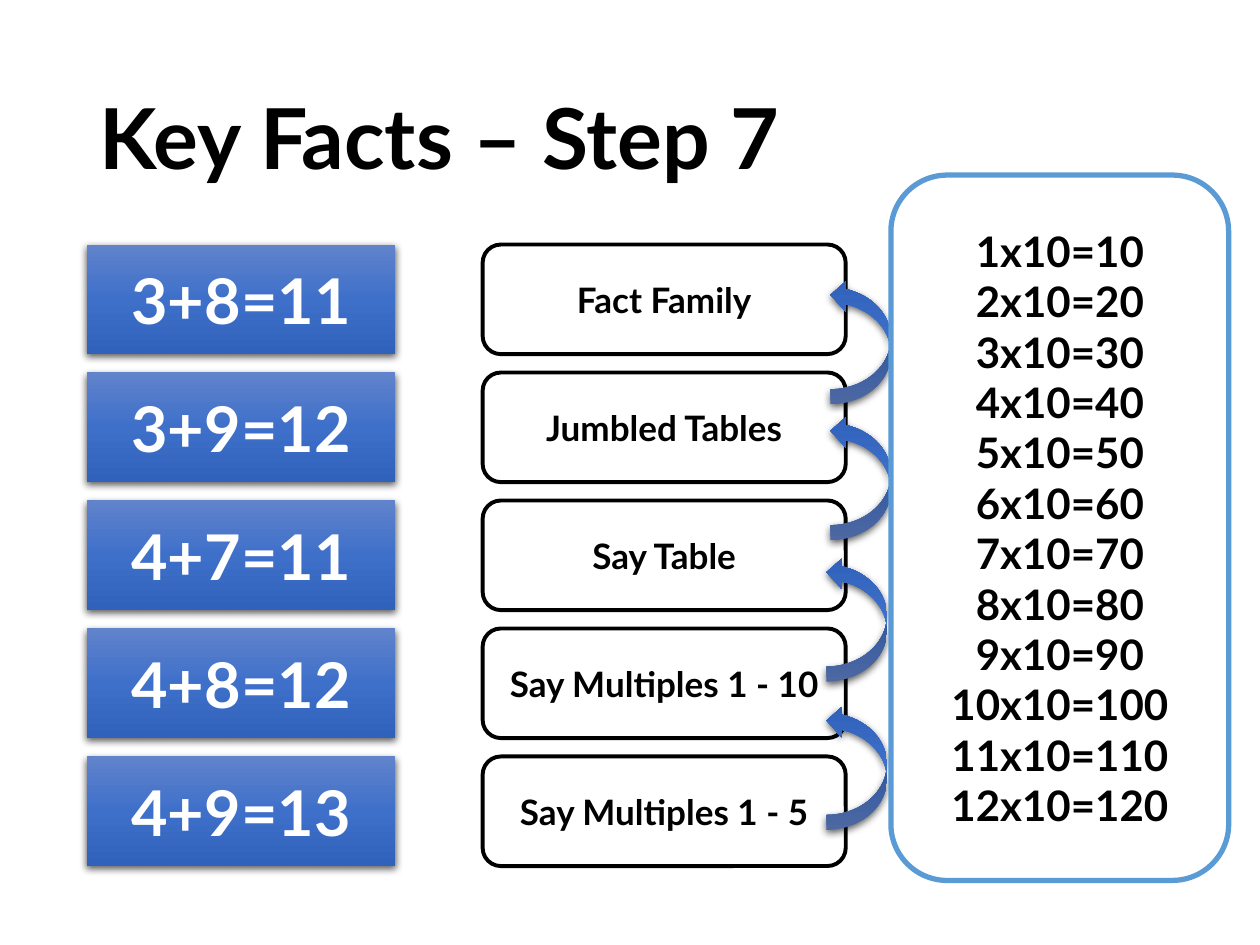
import copy

import pptx
import pptx.dml.color
import pptx.enum.shapes
import pptx.enum.text
import pptx.oxml
import pptx.oxml.ns
import pptx.util

Cm, Pt = pptx.util.Cm, pptx.util.Pt
RGBColor = pptx.dml.color.RGBColor
MSO_SHAPE = pptx.enum.shapes.MSO_SHAPE
PP_ALIGN = pptx.enum.text.PP_ALIGN
MSO_ANCHOR = pptx.enum.text.MSO_ANCHOR
qn = pptx.oxml.ns.qn

BLACK = RGBColor(0x00, 0x00, 0x00)
WHITE = RGBColor(0xFF, 0xFF, 0xFF)
SKY = RGBColor(0x5B, 0x9B, 0xD5)
BLUES = [RGBColor(0x61, 0x83, 0xCB), RGBColor(0x3E, 0x70, 0xCA), RGBColor(0x30, 0x62, 0xBB)]
FONT = "Lato"
BOX_HEIGHT, ROW_PITCH = 2.21, 2.58

SHADOW = (
    f'<a:outerShdw {pptx.oxml.ns.nsdecls("a")} blurRad="57150" dist="19050" dir="5400000" '
    'algn="ctr" rotWithShape="0"><a:srgbClr val="000000"><a:alpha val="63000"/>'
    "</a:srgbClr></a:outerShdw>"
)

SUMS = ["3+8=11", "3+9=12", "4+7=11", "4+8=12", "4+9=13"]
STAGES = ["Fact Family", "Jumbled Tables", "Say Table", "Say Multiples 1 - 10", "Say Multiples 1 - 5"]
TIMES_TABLE = [f"{n}x10={n * 10}" for n in range(1, 13)]


def format_paragraph(p, size, color, align):
    p.alignment = align
    p.font.name = FONT
    p.font.size = Pt(size)
    p.font.bold = True
    p.font.color.rgb = color


def add_shape(shapes, kind, x, y, w, h, lines=(), size=20, color=BLACK):
    sp = shapes.add_shape(kind, Cm(x), Cm(y), Cm(w), Cm(h))
    sp.shadow.inherit = False
    tf = sp.text_frame
    tf.word_wrap = True
    tf.vertical_anchor = MSO_ANCHOR.MIDDLE
    if lines:
        tf.text = "\n".join(lines)
        for p in tf.paragraphs:
            format_paragraph(p, size, color, PP_ALIGN.CENTER)
    return sp


def style_outlined(sp, color, width):
    sp.fill.solid()
    sp.fill.fore_color.rgb = WHITE
    sp.line.color.rgb = color
    sp.line.width = Pt(width)


def style_glossy(sp):
    sp.line.fill.background()
    sp.fill.gradient()
    sp.fill.gradient_angle = 270
    spPr = sp._element.spPr
    stops = spPr.find(".//" + qn("a:gsLst"))
    stops.insert(1, copy.deepcopy(stops[0]))
    for i, (stop, color) in enumerate(zip(sp.fill.gradient_stops, BLUES)):
        stop.position = i / 2
        stop.color.rgb = color
    spPr.find(qn("a:effectLst")).append(pptx.oxml.parse_xml(SHADOW))


def add_title(s, x, y, w, h):
    title = s.shapes.title
    title.left, title.top, title.width, title.height = Cm(x), Cm(y), Cm(w), Cm(h)
    tf = title.text_frame
    tf.text = "Key Facts – Step 7"
    tf.vertical_anchor = MSO_ANCHOR.MIDDLE
    p = tf.paragraphs[0]
    p.line_spacing = 0.9
    format_paragraph(p, 48, BLACK, PP_ALIGN.LEFT)


def add_stages(s, x, y, w):
    shapes = s.shapes.add_group_shape().shapes
    for i, stage in enumerate(STAGES):
        sp = add_shape(shapes, MSO_SHAPE.ROUNDED_RECTANGLE, x, y + i * ROW_PITCH, w, BOX_HEIGHT, [stage])
        style_outlined(sp, BLACK, 2.25)
    for dx, dy in [(7.01, 0.71), (7.01, 3.45), (6.93, 6.3), (6.93, 9.29)]:
        sp = add_shape(shapes, MSO_SHAPE.CURVED_RIGHT_ARROW, x + dx, y + dy, 1.22, 2.51)
        sp.rotation = 180
        style_glossy(sp)


def add_sums(s, x, y, w):
    shapes = s.shapes.add_group_shape().shapes
    for i, total in enumerate(SUMS):
        sp = add_shape(shapes, MSO_SHAPE.RECTANGLE, x, y + i * ROW_PITCH, w, BOX_HEIGHT, [total], 36, WHITE)
        style_glossy(sp)


def add_times_table(s, x, y, w, h):
    sp = add_shape(s.shapes, MSO_SHAPE.ROUNDED_RECTANGLE, x, y, w, h, TIMES_TABLE, 24)
    style_outlined(sp, SKY, 3)


def main():
    prs = pptx.Presentation()
    prs.slide_width, prs.slide_height = Cm(25.4), Cm(19.05)
    s = prs.slides.add_slide(prs.slide_layouts[5])
    add_title(s, 1.75, 1.02, 21.9, 3.68)
    add_stages(s, 9.73, 4.93, 7.32)
    add_sums(s, 1.75, 4.93, 6.22)
    add_times_table(s, 17.96, 3.53, 6.81, 14.22)
    prs.save("out.pptx")


if __name__ == "__main__":
    main()
